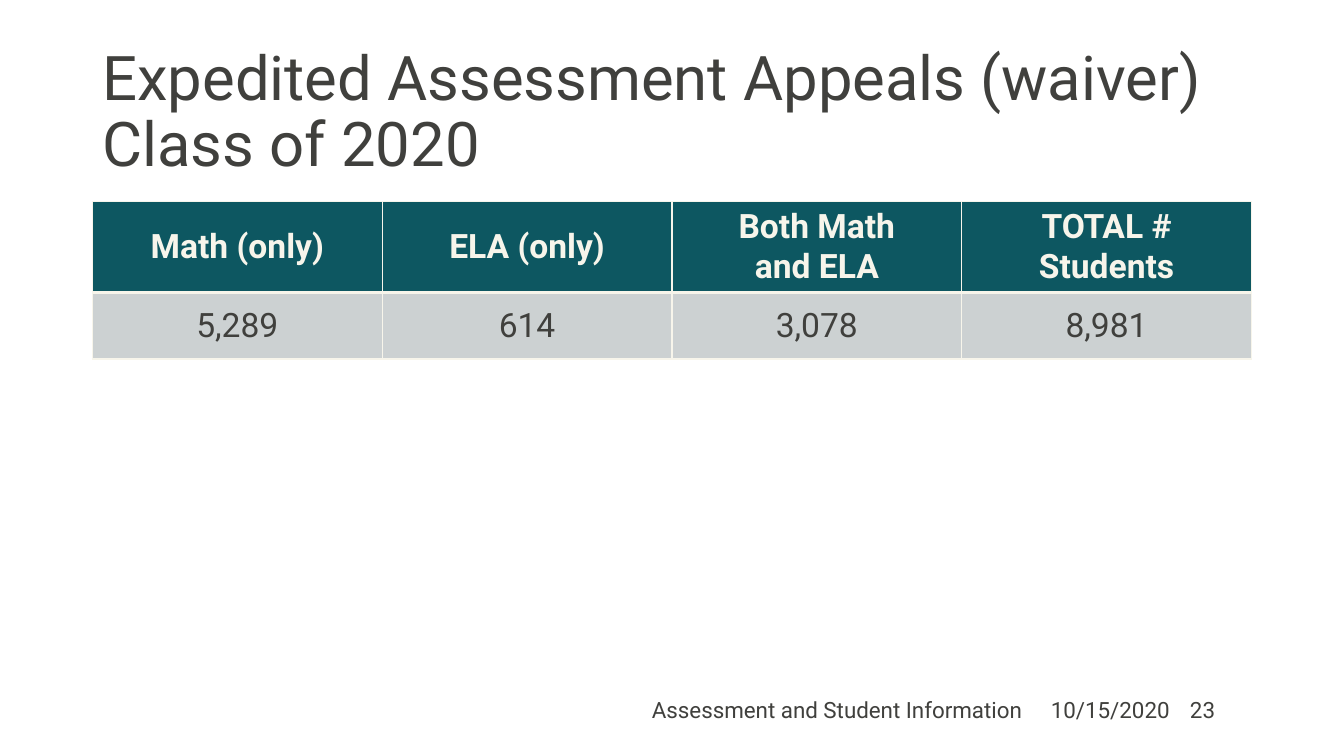
from lxml import etree
from pptx import Presentation, util as u
from pptx.dml.color import RGBColor
from pptx.enum import text as t
from pptx.oxml import ns

HUES = {"ink": "40403D", "cream": "F7F5EB", "teal": "0D5761", "grey": "CCD1D2"}
HEADS = ["Math (only)", "ELA (only)", "Both Math\nand ELA", "TOTAL # Students"]
COUNTS = ["5,289", "614", "3,078", "8,981"]


def hue(name):
    return RGBColor.from_string(HUES[name])


def write(frame, words, size=16, color="ink", bold=False, align="LEFT", space=1.0):
    frame.text = words
    frame.word_wrap = True
    for para in frame.paragraphs:
        para.alignment = getattr(t.PP_ALIGN, align)
        para.line_spacing = space
        for run in para.runs:
            run.font.name = "Roboto"
            run.font.size = u.Pt(size)
            run.font.bold = bold
            run.font.color.rgb = hue(color)


def label(slide, box, words, **style):
    frame = slide.shapes.add_textbox(*map(u.Cm, box)).text_frame
    frame.vertical_anchor = t.MSO_ANCHOR.MIDDLE
    write(frame, words, **style)


def edge(cell, side, width):
    props = cell._tc.get_or_add_tcPr()
    line = etree.SubElement(props, ns.qn("a:ln" + side), w=str(u.Pt(width)))
    fill = etree.SubElement(line, ns.qn("a:solidFill"))
    etree.SubElement(fill, ns.qn("a:srgbClr"), val=HUES["cream"])


def title(slide, box):
    label(slide, box, "Expedited Assessment Appeals (waiver)\vClass of 2020",
          size=44, space=0.9)


def table(slide, box):
    grid = slide.shapes.add_table(2, len(HEADS), *map(u.Cm, box)).table
    rows = [
        (HEADS, 2.24, "teal", "cream", True, {"L": 1, "R": 1, "T": 1, "B": 3}),
        (COUNTS, 1.68, "grey", "ink", False, {"L": 1, "R": 1, "T": 3, "B": 1}),
    ]
    for r, (words, height, fill, color, bold, edges) in enumerate(rows):
        grid.rows[r].height = u.Cm(height)
        for c, word in enumerate(words):
            cell = grid.cell(r, c)
            write(cell.text_frame, word, size=24, color=color, bold=bold,
                  align="CENTER")
            cell.vertical_anchor = t.MSO_ANCHOR.MIDDLE
            for side, width in edges.items():
                edge(cell, side, width)
            cell.fill.solid()
            cell.fill.fore_color.rgb = hue(fill)


def footer(slide, box):
    left, top, width, height = box
    parts = [
        ("Assessment and Student Information", 0, 16.15, "RIGHT"),
        ("10/15/2020", 16, 4.24, "CENTER"),
        ("23", width - 1.78, 1.78, "LEFT"),
    ]
    for words, shift, span, align in parts:
        label(slide, (left + shift, top, span, height), words, align=align)


def main():
    deck = Presentation()
    deck.slide_width, deck.slide_height = u.Cm(33.87), u.Cm(19.05)
    slide = deck.slides.add_slide(deck.slide_layouts[6])
    title(slide, (2.33, 1.02, 29.21, 3.68))
    table(slide, (2.33, 5.08, 29.21, 3.92))
    footer(slide, (9.86, 17.37, 21.66, 1.02))
    deck.save("out.pptx")


if __name__ == "__main__":
    main()
